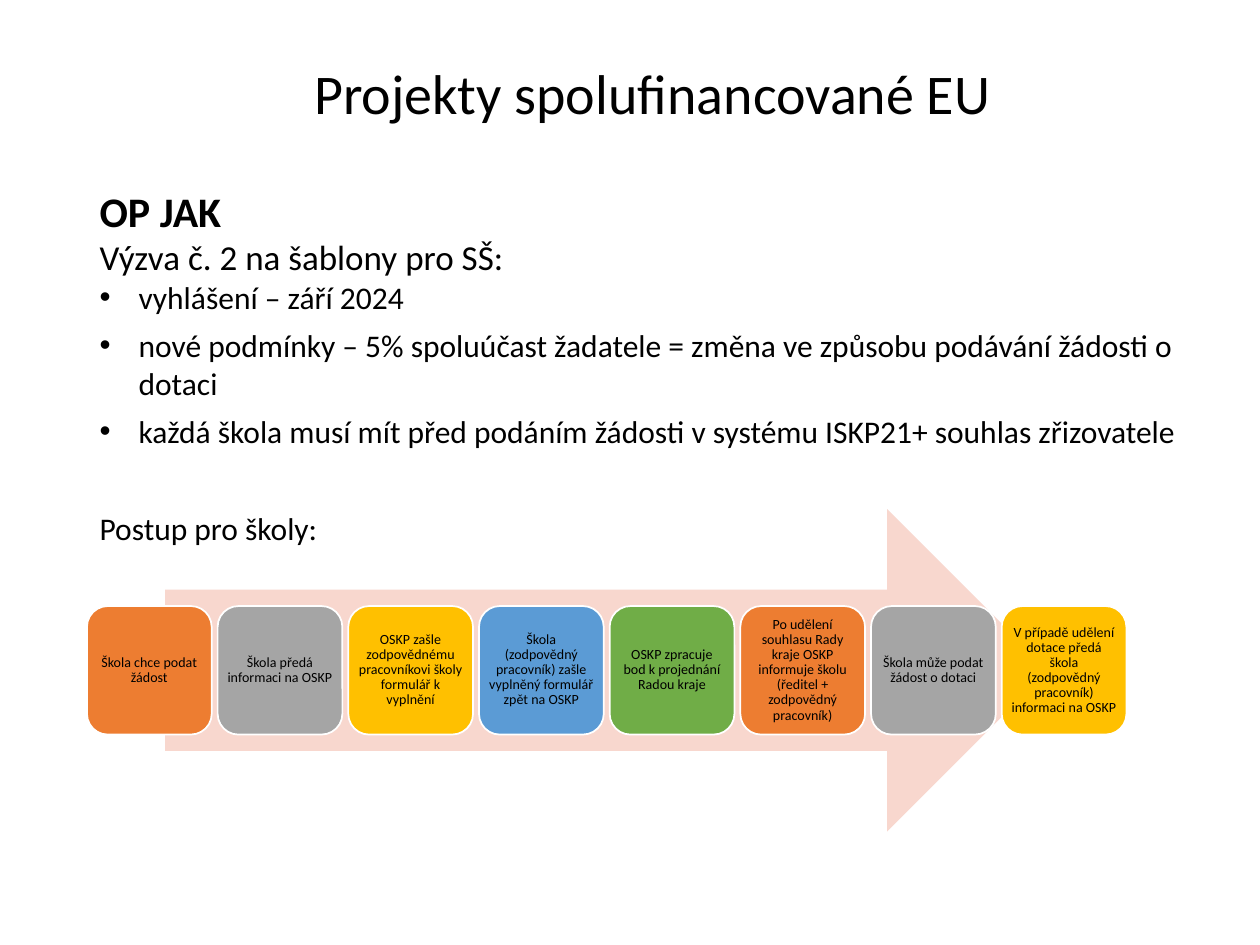
from pptx import Presentation
from pptx.dml.color import RGBColor
from pptx.enum.shapes import MSO_SHAPE
from pptx.enum.text import MSO_ANCHOR, MSO_AUTO_SIZE, PP_ALIGN
from pptx.oxml.ns import qn
from pptx.util import Inches, Pt
from lxml import etree

BLACK = RGBColor(0x00, 0x00, 0x00)
WHITE = RGBColor(0xFF, 0xFF, 0xFF)
PINK = RGBColor(0xF8, 0xD7, 0xCE)
ORANGE = RGBColor(0xED, 0x7D, 0x31)
GRAY = RGBColor(0xA5, 0xA5, 0xA5)
GOLD = RGBColor(0xFF, 0xC0, 0x00)
BLUE = RGBColor(0x5B, 0x9B, 0xD5)
GREEN = RGBColor(0x70, 0xAD, 0x47)


def add_run(p, text, size, bold=False):
    r = p.add_run()
    r.text = text
    r.font.name = "Calibri"
    r.font.size = Pt(size)
    r.font.bold = bold
    r.font.color.rgb = BLACK


def set_bullet(p, bulleted):
    pPr = p._p.get_or_add_pPr()
    pPr.set("marL", str(Inches(0.31 if bulleted else 0)))
    pPr.set("indent", str(Inches(-0.31 if bulleted else 0)))
    if bulleted:
        etree.SubElement(pPr, qn("a:buFont")).set("typeface", "Arial")
        etree.SubElement(pPr, qn("a:buChar")).set("char", "•")
    else:
        etree.SubElement(pPr, qn("a:buNone"))


prs = Presentation()
prs.slide_width, prs.slide_height = Inches(10), Inches(7.5)
s = prs.slides.add_slide(prs.slide_layouts[1])

title = s.shapes.title
title.left, title.top = Inches(0.69), Inches(0.11)
title.width, title.height = Inches(8.98), Inches(1.31)
tf = title.text_frame
tf.auto_size = MSO_AUTO_SIZE.NONE
tf.vertical_anchor = MSO_ANCHOR.MIDDLE
p = tf.paragraphs[0]
p.alignment = PP_ALIGN.CENTER
p.line_spacing = 0.9
add_run(p, "Projekty spolufinancované EU", 32)

body = s.placeholders[1]
body.left, body.top = Inches(0.69), Inches(1.42)
body.width, body.height = Inches(8.98), Inches(3.38)
tf = body.text_frame
tf.auto_size = MSO_AUTO_SIZE.NONE
tf.vertical_anchor = MSO_ANCHOR.TOP
lines = [
    ("OP JAK", 24, True, False, 0, 0),
    ("Výzva č. 2 na šablony pro SŠ:", 20, False, False, 0, 0),
    ("vyhlášení – září 2024", 18, False, True, 0, 6),
    ("nové podmínky – 5% spoluúčast žadatele = změna ve způsobu podávání žádosti o dotaci",
     18, False, True, 0, 6),
    ("každá škola musí mít před podáním žádosti v systému ISKP21+ souhlas zřizovatele",
     18, False, True, 0, 6),
    ("Postup pro školy:", 18, False, False, 28, 6),
]
for i, (text, size, bold, bulleted, before, after) in enumerate(lines):
    p = tf.add_paragraph() if i else tf.paragraphs[0]
    set_bullet(p, bulleted)
    p.alignment = PP_ALIGN.LEFT
    p.space_before, p.space_after = Pt(before), Pt(after)
    add_run(p, text, size, bold)

arrow = s.shapes.add_shape(MSO_SHAPE.RIGHT_ARROW, Inches(1.31), Inches(4.04),
                           Inches(7.01), Inches(2.56))
arrow.shadow.inherit = False
arrow.fill.solid()
arrow.fill.fore_color.rgb = PINK
arrow.line.fill.background()

steps = [
    ("Škola chce podat žádost", ORANGE),
    ("Škola předá informaci na OSKP", GRAY),
    ("OSKP zašle zodpovědnému pracovníkovi školy formulář k vyplnění", GOLD),
    ("Škola (zodpovědný pracovník) zašle vyplněný formulář zpět na OSKP", BLUE),
    ("OSKP zpracuje bod k projednání Radou kraje", GREEN),
    ("Po udělení souhlasu Rady kraje OSKP informuje školu (ředitel + zodpovědný pracovník)", ORANGE),
    ("Škola může podat žádost o dotaci", GRAY),
    ("V případě udělení dotace předá škola (zodpovědný pracovník) informaci na OSKP", GOLD),
]
pitch = 7.26 / (len(steps) - 1)
for i, (text, color) in enumerate(steps):
    sp = s.shapes.add_shape(MSO_SHAPE.ROUNDED_RECTANGLE, Inches(0.69 + i * pitch),
                            Inches(4.81), Inches(0.99), Inches(1.02))
    sp.shadow.inherit = False
    sp.fill.solid()
    sp.fill.fore_color.rgb = color
    sp.line.color.rgb = WHITE
    sp.line.width = Pt(1)
    tf = sp.text_frame
    tf.word_wrap = True
    tf.vertical_anchor = MSO_ANCHOR.MIDDLE
    tf.margin_left = tf.margin_right = tf.margin_top = tf.margin_bottom = Inches(0.03)
    p = tf.paragraphs[0]
    p.alignment = PP_ALIGN.CENTER
    p.line_spacing = 0.9
    add_run(p, text, 8)

prs.save("out.pptx")
